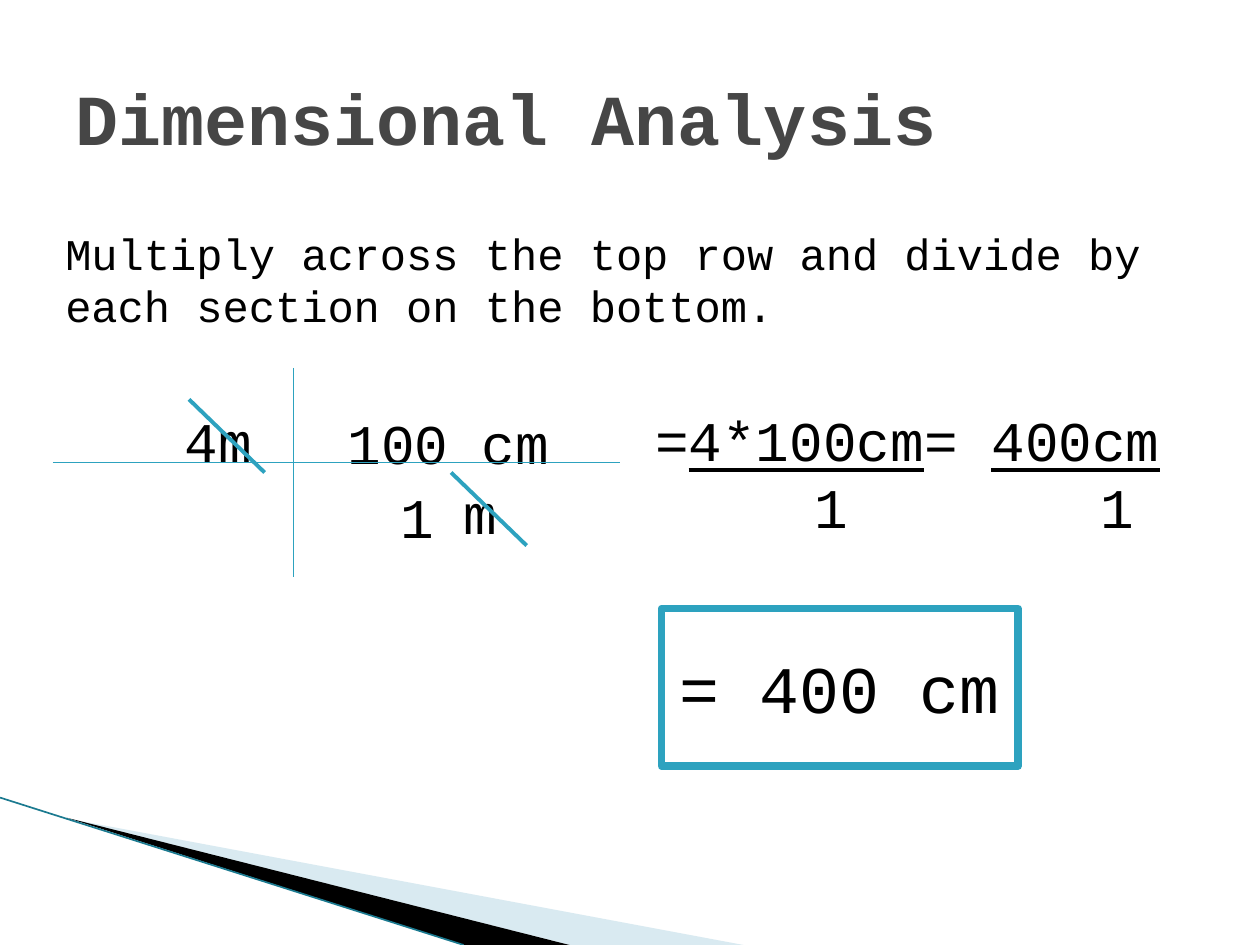
from typing import NamedTuple

from pptx import Presentation
from pptx.dml.color import RGBColor
from pptx.enum.shapes import MSO_CONNECTOR, MSO_SHAPE
from pptx.enum.text import MSO_ANCHOR, PP_ALIGN
from pptx.oxml.ns import qn
from pptx.util import Pt
from lxml.etree import SubElement

PX = 9144  # EMU per px, at 100 px to the inch
FONT = "Courier New"
COLORS = {
    "accent": "2DA2BF",
    "edge": "1B7A90",
    "pale": "A0CBDC",
    "title": "464646",
    "black": "000000",
    "white": "FFFFFF",
}


class Box(NamedTuple):
    left: int
    top: int
    width: int
    height: int


class Label(NamedTuple):
    text: str
    box: Box
    size: int = 32
    color: str = "black"
    bold: bool = False
    wrap: bool = False
    anchor: MSO_ANCHOR = MSO_ANCHOR.TOP


class Line(NamedTuple):
    start: tuple[int, int]
    end: tuple[int, int]
    width: float
    color: str = "accent"


class Wedge(NamedTuple):
    points: list[tuple[int, int]]
    color: str
    opacity: int = 100


WEDGES = [
    Wedge([(55, 650), (590, 750), (452, 750)], "pale", 40),
    Wedge([(53, 649), (452, 750), (368, 750)], "black"),
]
EDGE = Line((0, 633), (368, 750), 0.95, "edge")
LABELS = [
    Label("Dimensional Analysis", Box(50, 30, 900, 125), 41, "title", True, True,
          MSO_ANCHOR.MIDDLE),
    Label("Multiply across the top row and divide by each section on the bottom.",
          Box(42, 175, 917, 148), 25, wrap=True),
    Label("4m", Box(137, 318, 90, 64)),
    Label("m", Box(358, 375, 62, 64)),
    Label("1", Box(308, 378, 58, 64)),
    Label("100 cm", Box(266, 319, 184, 64)),
]
LINES = [
    Line((42, 367), (492, 367), 0.75),
    Line((233, 292), (233, 458), 0.75),
    Line((150, 317), (210, 375), 2.25),
    Line((358, 375), (418, 433), 2.25),
]
ANSWER = Label("= 400 cm", Box(525, 483, 283, 125), 38, anchor=MSO_ANCHOR.MIDDLE)
FRACTIONS = Box(510, 317, 485, 226)
NUMERATORS = [("=", False), ("4*100cm", True), ("= ", False), ("400cm", True)]
DENOMINATOR_CENTERS = [140, 367]


def rgb(color: str) -> RGBColor:
    return RGBColor.from_string(COLORS[color])


def emu(lengths) -> list[int]:
    return [length * PX for length in lengths]


def add_run(paragraph, text: str, size: int, color: str = "black", **formats) -> None:
    run = paragraph.add_run()
    run.text = text
    values = {"name": FONT, "size": Pt(size), **formats}
    for attribute, value in values.items():
        setattr(run.font, attribute, value)
    run.font.color.rgb = rgb(color)


def add_label(slide, label: Label) -> None:
    frame = slide.shapes.add_textbox(*emu(label.box)).text_frame
    frame.word_wrap = label.wrap
    frame.vertical_anchor = label.anchor
    add_run(frame.paragraphs[0], label.text, label.size, label.color, bold=label.bold)


def add_line(slide, line: Line) -> None:
    connector = slide.shapes.add_connector(
        MSO_CONNECTOR.STRAIGHT, *emu(line.start + line.end))
    connector.line.color.rgb = rgb(line.color)
    connector.line.width = Pt(line.width)
    SubElement(connector._element.spPr, qn("a:effectLst"))


def add_wedge(slide, wedge: Wedge) -> None:
    builder = slide.shapes.build_freeform(*wedge.points[0], scale=PX)
    builder.add_line_segments(wedge.points[1:], close=True)
    shape = builder.convert_to_shape()
    shape.shadow.inherit = False
    shape.line.fill.background()
    shape.fill.solid()
    shape.fill.fore_color.rgb = rgb(wedge.color)
    if wedge.opacity < 100:
        color = shape._element.spPr.find(qn("a:solidFill"))[0]
        SubElement(color, qn("a:alpha"), val=str(wedge.opacity * 1000))


def add_answer(slide, answer: Label) -> None:
    shape = slide.shapes.add_shape(MSO_SHAPE.RECTANGLE, *emu(answer.box))
    shape.shadow.inherit = False
    shape.fill.solid()
    shape.fill.fore_color.rgb = rgb("white")
    shape.line.color.rgb = rgb("accent")
    shape.line.width = Pt(4.33)
    SubElement(shape.line._get_or_add_ln(), qn("a:round"))
    shape.text_frame.vertical_anchor = answer.anchor
    paragraph = shape.text_frame.paragraphs[0]
    paragraph.alignment = PP_ALIGN.CENTER
    add_run(paragraph, answer.text, answer.size, answer.color)


def add_fractions(slide) -> None:
    """Write underlined numerators with a 1 centred by tab below each."""
    frame = slide.shapes.add_textbox(*emu(FRACTIONS)).text_frame
    frame.word_wrap = True
    numerators = frame.paragraphs[0]
    for text, underline in NUMERATORS:
        add_run(numerators, text, 32, underline=underline)
    denominators = frame.add_paragraph()
    tabs = SubElement(denominators._p.get_or_add_pPr(), qn("a:tabLst"))
    for center in DENOMINATOR_CENTERS:
        SubElement(tabs, qn("a:tab"), pos=str(center * PX), algn="ctr")
    add_run(denominators, "\t1" * len(DENOMINATOR_CENTERS), 32)


def main() -> None:
    presentation = Presentation()
    presentation.slide_width, presentation.slide_height = emu((1000, 750))
    slide = presentation.slides.add_slide(presentation.slide_layouts[6])
    for wedge in WEDGES:
        add_wedge(slide, wedge)
    add_line(slide, EDGE)
    add_answer(slide, ANSWER)
    for label in LABELS:
        add_label(slide, label)
    for line in LINES:
        add_line(slide, line)
    add_fractions(slide)
    presentation.save("out.pptx")


if __name__ == "__main__":
    main()
